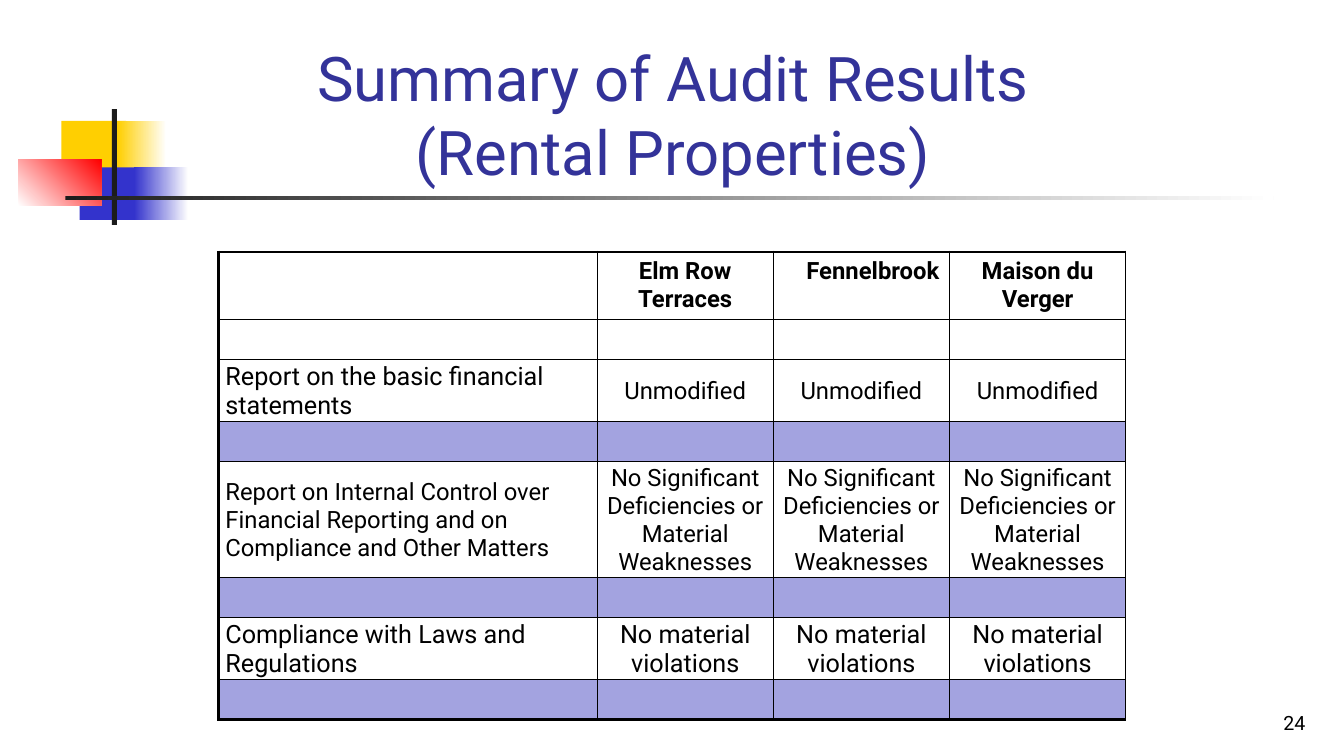
import pptx
import pptx.dml.color
import pptx.enum.shapes
import pptx.enum.text
import pptx.oxml
import pptx.oxml.ns
import pptx.util
from dataclasses import dataclass

Cm = pptx.util.Cm
Pt = pptx.util.Pt
Align = pptx.enum.text.PP_ALIGN
Anchor = pptx.enum.text.MSO_ANCHOR


@dataclass(frozen=True)
class Theme:
    font: str = "Roboto"
    title: str = "333399"
    text: str = "000000"
    band: str = "A3A3E0"
    white: str = "FFFFFF"
    yellow: str = "FFCF01"
    blue: str = "3333CC"
    red: str = "FF0000"
    dark: str = "1C1C1C"
    title_size: float = 44
    large_size: float = 18
    table_size: float = 17
    number_size: float = 14
    thin: float = 1
    thick: float = 2.25


theme = Theme()

TITLE = ["Summary of Audit Results", "(Rental Properties)"]
SLIDE_NUMBER = "24"
HEADERS = [("Elm Row Terraces", Align.CENTER), ("Fennelbrook", Align.RIGHT), ("Maison du Verger", Align.CENTER)]
REPORTS = [
    (["Report on the basic financial", "statements"], "Unmodified",
     theme.large_size, theme.table_size),
    (["Report on Internal Control over", "Financial Reporting and on", "Compliance and Other Matters"],
     "No Significant Deficiencies or Material Weaknesses", theme.table_size, theme.table_size),
    (["Compliance with Laws and", "Regulations"], "No material violations",
     theme.large_size, theme.large_size),
]
COLUMN_WIDTHS = [9.54, 4.44, 4.44, 4.44]
ROW_HEIGHTS = [1.7, 1.01, 1.53, 1.01, 2.89, 1.01, 1.55, 1.01]
BAND_ROWS = (3, 5, 7)
ORNAMENTS = [
    ((1.55, 3.05, 1.63, 1.32), [theme.yellow], 0),
    ((2.97, 3.05, 1.22, 1.32), [theme.yellow, theme.white], 0),
    ((2.01, 4.22, 1.55, 1.32), [theme.blue], 0),
    ((3.38, 4.22, 1.37, 1.32), [theme.blue, theme.white], 0),
    ((0.47, 4.01, 2.08, 1.18), [theme.white, theme.red], 45),
    ((2.82, 2.75, 0.13, 2.92), [theme.dark], 0),
    ((1.65, 4.95, 30.45, 0.09), [theme.dark, theme.white], 0),
]


def rgb(color):
    return pptx.dml.color.RGBColor.from_string(color)


def add_run(paragraph, text, size, color=theme.text, bold=False):
    run = paragraph.add_run()
    run.text = text
    run.font.name = theme.font
    run.font.size = Pt(size)
    run.font.bold = bold
    run.font.color.rgb = rgb(color)


def add_ornament(slide, box, colors, angle):
    shape = slide.shapes.add_shape(pptx.enum.shapes.MSO_SHAPE.RECTANGLE, *map(Cm, box))
    shape.shadow.inherit = False
    shape.line.fill.background()
    if len(colors) == 1:
        shape.fill.solid()
        shape.fill.fore_color.rgb = rgb(colors[0])
        return
    shape.fill.gradient()
    shape.fill.gradient_angle = angle
    for stop, color, position in zip(shape.fill.gradient_stops, colors, (0, 1)):
        stop.color.rgb = rgb(color)
        stop.position = position


def add_title(slide):
    title = slide.shapes.title
    title.left, title.top, title.width, title.height = map(Cm, (6.15, 0.81, 21.64, 4.06))
    frame = title.text_frame
    frame.auto_size = pptx.enum.text.MSO_AUTO_SIZE.NONE
    frame.vertical_anchor = Anchor.BOTTOM
    paragraph = frame.paragraphs[0]
    paragraph.alignment = Align.CENTER
    add_run(paragraph, TITLE[0], theme.title_size, theme.title)
    paragraph.add_line_break()
    add_run(paragraph, TITLE[1], theme.title_size, theme.title)


def add_slide_number(slide):
    frame = slide.shapes.add_textbox(Cm(26.09), Cm(17.35), Cm(7.06), Cm(1.27)).text_frame
    frame.word_wrap = True
    frame.vertical_anchor = Anchor.BOTTOM
    paragraph = frame.paragraphs[0]
    paragraph.alignment = Align.RIGHT
    add_run(paragraph, SLIDE_NUMBER, theme.number_size)


def style_cell(cell, row, column):
    if row in BAND_ROWS:
        cell.fill.solid()
        cell.fill.fore_color.rgb = rgb(theme.band)
    else:
        cell.fill.background()
    outer = {"L": column == 0, "R": False, "T": row == 0, "B": row == len(ROW_HEIGHTS) - 1}
    for index, (side, is_outer) in enumerate(outer.items()):
        width = Pt(theme.thick if is_outer else theme.thin)
        cell._tc.get_or_add_tcPr().insert(index, pptx.oxml.parse_xml(
            f'<a:ln{side} {pptx.oxml.ns.nsdecls("a")} w="{width}"><a:solidFill>'
            f'<a:srgbClr val="{theme.text}"/></a:solidFill></a:ln{side}>'))


def write_cell(cell, lines, size, alignment, left_margin=0.03):
    cell.vertical_anchor = Anchor.MIDDLE
    cell.margin_left = Cm(left_margin)
    cell.margin_right = cell.margin_top = Cm(0.03)
    cell.margin_bottom = 0
    for index, line in enumerate(lines):
        frame = cell.text_frame
        paragraph = frame.add_paragraph() if index else frame.paragraphs[0]
        paragraph.alignment = alignment
        add_run(paragraph, line, size)


def add_results_table(slide):
    table = slide.shapes.add_table(
        len(ROW_HEIGHTS), len(COLUMN_WIDTHS), Cm(5.51), Cm(6.35),
        Cm(sum(COLUMN_WIDTHS)), Cm(sum(ROW_HEIGHTS))).table
    table.first_row = table.horz_banding = False
    for column, width in zip(table.columns, COLUMN_WIDTHS):
        column.width = Cm(width)
    for row, height in zip(table.rows, ROW_HEIGHTS):
        row.height = Cm(height)
    for row in range(len(ROW_HEIGHTS)):
        for column in range(len(COLUMN_WIDTHS)):
            style_cell(table.cell(row, column), row, column)
    for column, (header, alignment) in enumerate(HEADERS, start=1):
        paragraph = table.cell(0, column).text_frame.paragraphs[0]
        paragraph.alignment = alignment
        add_run(paragraph, header, theme.table_size, bold=True)
    for index, (label, result, label_size, result_size) in enumerate(REPORTS):
        row = 2 + 2 * index
        write_cell(table.cell(row, 0), label, label_size, Align.LEFT, left_margin=0.17)
        for column in range(1, len(COLUMN_WIDTHS)):
            write_cell(table.cell(row, column), [result], result_size, Align.CENTER)


def main():
    presentation = pptx.Presentation()
    presentation.slide_width = Cm(33.87)
    presentation.slide_height = Cm(19.05)
    slide = presentation.slides.add_slide(presentation.slide_layouts[5])
    for ornament in ORNAMENTS:
        add_ornament(slide, *ornament)
    add_title(slide)
    add_slide_number(slide)
    add_results_table(slide)
    presentation.save("out.pptx")


if __name__ == "__main__":
    main()
